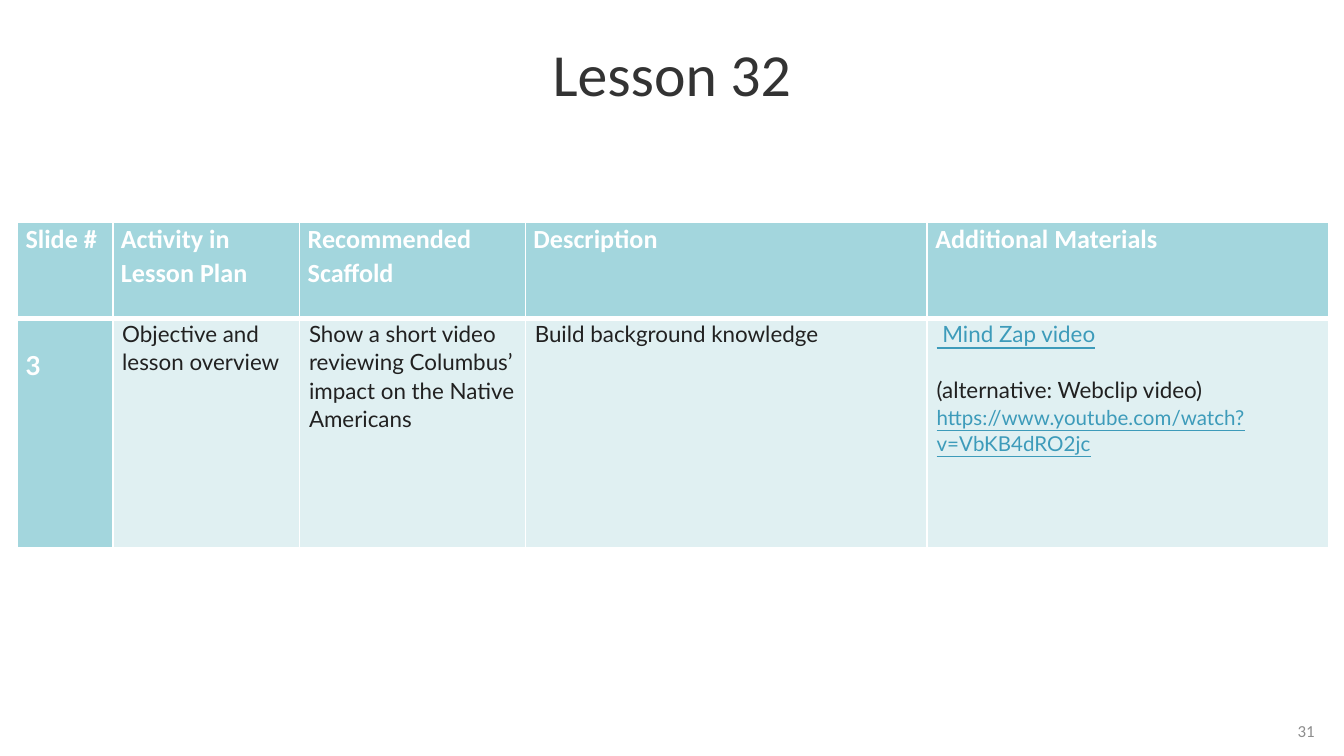
from lxml.etree import SubElement
from pptx import Presentation
from pptx.dml.color import RGBColor
from pptx.enum.text import MSO_ANCHOR, PP_ALIGN
from pptx.oxml.ns import qn
from pptx.util import Inches, Pt

WHITE = RGBColor(0xFF, 0xFF, 0xFF)
TEAL = RGBColor(0xA3, 0xD6, 0xDD)
PALE = RGBColor(0xE0, 0xF0, 0xF2)
TITLE_GREY = RGBColor(0x33, 0x33, 0x33)
NUMBER_GREY = RGBColor(0x8D, 0x8D, 0x8D)
INK = RGBColor(0x21, 0x21, 0x21)
LINK = RGBColor(0x3D, 0x9B, 0xBA)


def set_font(para, size, color, bold=False, name="Calibri"):
    font = para.font
    font.name, font.size, font.bold = name, Pt(size), bold
    font.color.rgb = color


def set_borders(cell, widths):
    """Draw white borders; widths are points for left, right, top, bottom."""
    properties = cell._tc.get_or_add_tcPr()
    for position, (side, width) in enumerate(zip("LRTB", widths)):
        line = SubElement(properties, qn(f"a:ln{side}"), w=str(Pt(width)))
        fill = SubElement(line, qn("a:solidFill"))
        SubElement(fill, qn("a:srgbClr"), val=str(WHITE))
        properties.insert(position, line)


deck = Presentation()
deck.slide_width = Inches(10)
deck.slide_height = Inches(10) * 9 // 16
page = deck.slides.add_slide(deck.slide_layouts[5])

title = page.shapes.title
title.left, title.top = Inches(0), Inches(0)
title.width, title.height = Inches(10), Inches(1.15)
title.text_frame.text = "Lesson 32"
title.text_frame.vertical_anchor = MSO_ANCHOR.MIDDLE
para = title.text_frame.paragraphs[0]
para.alignment = PP_ALIGN.CENTER
para.line_spacing = 0.9
set_font(para, 32, TITLE_GREY)

rows = [
    ["Slide #", "Activity in Lesson Plan", "Recommended Scaffold",
     "Description", "Additional Materials"],
    ["3", "Objective and lesson overview",
     "Show a short video reviewing Columbus’ impact on the Native Americans",
     "Build background knowledge",
     " Mind Zap video\n(alternative: Webclip video)\n"
     "https://www.youtube.com/watch?v=VbKB4dRO2jc"],
]
column_widths = [0.71, 1.39, 1.68, 2.99, 2.99]
row_heights = [0.72, 1.71]

lesson_table = page.shapes.add_table(
    len(rows), len(column_widths), Inches(0.13), Inches(1.65),
    Inches(sum(column_widths)), Inches(sum(row_heights))).table
for column, width in zip(lesson_table.columns, column_widths):
    column.width = Inches(width)
for row, height in zip(lesson_table.rows, row_heights):
    row.height = Inches(height)

for r, texts in enumerate(rows):
    for c, text in enumerate(texts):
        cell = lesson_table.cell(r, c)
        is_heading = r == 0 or c == 0
        cell.fill.solid()
        cell.fill.fore_color.rgb = TEAL if is_heading else PALE
        set_borders(cell, (1, 1, 1, 3) if r == 0 else (1, 1, 3, 1))
        cell.margin_left = cell.margin_right = Inches(0.06 if is_heading else 0.07)
        cell.margin_top = cell.margin_bottom = 0
        cell.text = text
        font_name = "Calibri" if r == 0 else "Lato"
        for para in cell.text_frame.paragraphs:
            para.line_spacing = 1.06
            if is_heading:
                set_font(para, 14, WHITE, bold=True, name=font_name)
            else:
                set_font(para, 12, INK, name=font_name)

lesson_table.cell(1, 0).text_frame.paragraphs[0].line_spacing = 2

video, alternative, address = lesson_table.cell(1, 4).text_frame.paragraphs
alternative.space_before = Pt(15)
address.font.size = Pt(11)
for para in (video, address):
    para.font.color.rgb = LINK
    para.font.underline = True

number_box = page.shapes.add_textbox(
    Inches(7.44), Inches(5.25), Inches(2.44), Inches(0.38))
number_box.text_frame.word_wrap = True
number_box.text_frame.vertical_anchor = MSO_ANCHOR.MIDDLE
para = number_box.text_frame.paragraphs[0]
para.text = "31"
para.alignment = PP_ALIGN.RIGHT
set_font(para, 9, NUMBER_GREY)

deck.save("out.pptx")
